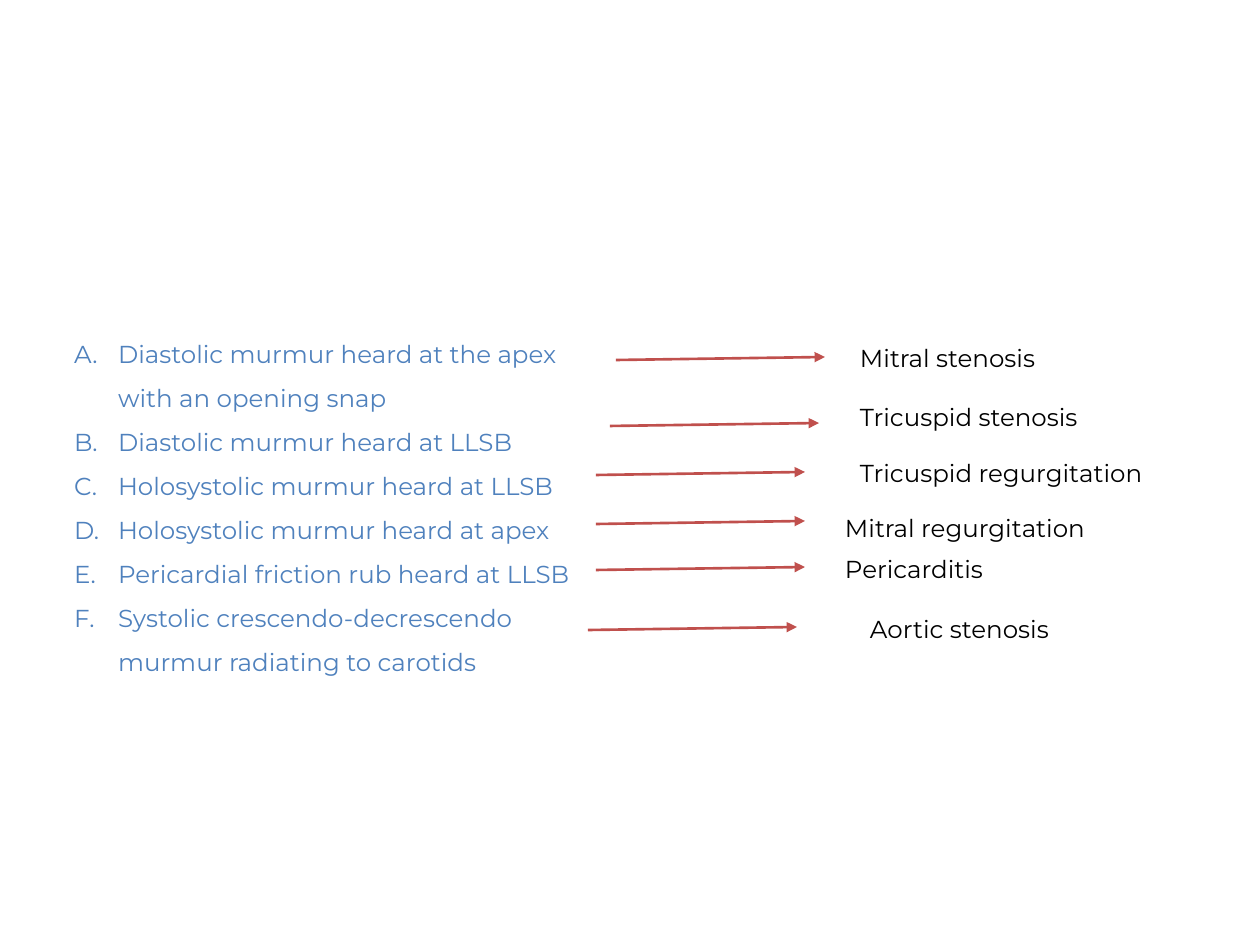
"""Build a slide that matches heart sounds to their diagnoses."""
import pptx
import pptx.dml.color
import pptx.enum.shapes
import pptx.enum.text
import pptx.util
from lxml import etree

FINDINGS = [
    "Diastolic murmur heard at the apex with an opening snap",
    "Diastolic murmur heard at LLSB",
    "Holosystolic murmur heard at LLSB",
    "Holosystolic murmur heard at apex",
    "Pericardial friction rub heard at LLSB",
    "Systolic crescendo-decrescendo murmur radiating to carotids",
]
DIAGNOSES = [
    {"text": "Mitral stenosis", "arrow": (616, 360), "label": (847, 330)},
    {"text": "Tricuspid stenosis", "arrow": (610, 426), "label": (847, 389)},
    {"text": "Tricuspid regurgitation", "arrow": (596, 475), "label": (847, 445)},
    {"text": "Mitral regurgitation", "arrow": (596, 524), "label": (832, 500), "width": 369},
    {"text": "Pericarditis", "arrow": (596, 570), "label": (832, 541)},
    {"text": "Aortic stenosis", "arrow": (588, 630), "label": (857, 601)},
]
COLORS = {"finding": "4F81BD", "arrow": "C0504D", "diagnosis": "000000"}
LIST_BOX = (42, 311, 554, 367)
LABEL_WIDTH, LABEL_HEIGHT = 321, 55
ARROW_LENGTH, ARROW_RISE = 209, 3
MARGIN, INDENT, HANGING = 13, 63, 44
FONT = {"name": "Montserrat", "size": pptx.util.Pt(14)}


def px(length):
    return pptx.util.Emu(round(length * 914400 / 126))


def rgb(role):
    return pptx.dml.color.RGBColor.from_string(COLORS[role])


def add_xml(parent, tag, **attributes):
    return etree.SubElement(parent, pptx.oxml.ns.qn(tag), attributes)


def apply_format(target, values):
    for name, value in values.items():
        setattr(target, name, value)


def format_frame(frame):
    sides = ("left", "top", "right", "bottom")
    apply_format(frame, {f"margin_{side}": px(MARGIN) for side in sides})
    apply_format(frame, {
        "word_wrap": True,
        "auto_size": pptx.enum.text.MSO_AUTO_SIZE.SHAPE_TO_FIT_TEXT,
        "vertical_anchor": pptx.enum.text.MSO_ANCHOR.TOP,
    })


def write_span(paragraph, text, role):
    span = paragraph.add_run()
    span.text = text
    apply_format(span.font, FONT)
    span.font.color.rgb = rgb(role)


def fill_findings(box):
    apply_format(box, dict(zip(("left", "top", "width", "height"), map(px, LIST_BOX))))
    frame = box.text_frame
    format_frame(frame)
    for index, text in enumerate(FINDINGS):
        paragraph = frame.add_paragraph() if index else frame.paragraphs[0]
        properties = paragraph._p.get_or_add_pPr()
        properties.set("marL", str(px(INDENT)))
        properties.set("indent", str(-px(HANGING)))
        bullet_color = add_xml(properties, "a:buClr")
        add_xml(bullet_color, "a:srgbClr", val=COLORS["finding"])
        add_xml(properties, "a:buFont", typeface=FONT["name"])
        add_xml(properties, "a:buAutoNum", type="alphaUcPeriod")
        apply_format(paragraph, {"line_spacing": 1.5, "space_before": pptx.util.Pt(0)})
        write_span(paragraph, text, "finding")


def add_arrow(page, left, top):
    arrow = page.shapes.add_connector(
        pptx.enum.shapes.MSO_CONNECTOR.STRAIGHT,
        px(left), px(top), px(left + ARROW_LENGTH), px(top - ARROW_RISE))
    arrow.line.color.rgb = rgb("arrow")
    arrow.line.width = pptx.util.Pt(1.5)
    add_xml(arrow.line._get_or_add_ln(), "a:tailEnd", type="triangle")
    add_xml(arrow._element.spPr, "a:effectLst")


def add_label(page, text, left, top, width):
    box = page.shapes.add_textbox(px(left), px(top), px(width), px(LABEL_HEIGHT))
    format_frame(box.text_frame)
    write_span(box.text_frame.paragraphs[0], text, "diagnosis")


def main():
    deck = pptx.Presentation()
    deck.slide_width, deck.slide_height = px(1260), px(945)
    page = deck.slides.add_slide(deck.slide_layouts[1])
    title = page.shapes.title._element
    title.getparent().remove(title)
    fill_findings(page.placeholders[1])
    for diagnosis in DIAGNOSES:
        add_arrow(page, *diagnosis["arrow"])
    for diagnosis in DIAGNOSES:
        add_label(page, diagnosis["text"], *diagnosis["label"],
                  diagnosis.get("width", LABEL_WIDTH))
    deck.save("out.pptx")


if __name__ == "__main__":
    main()
